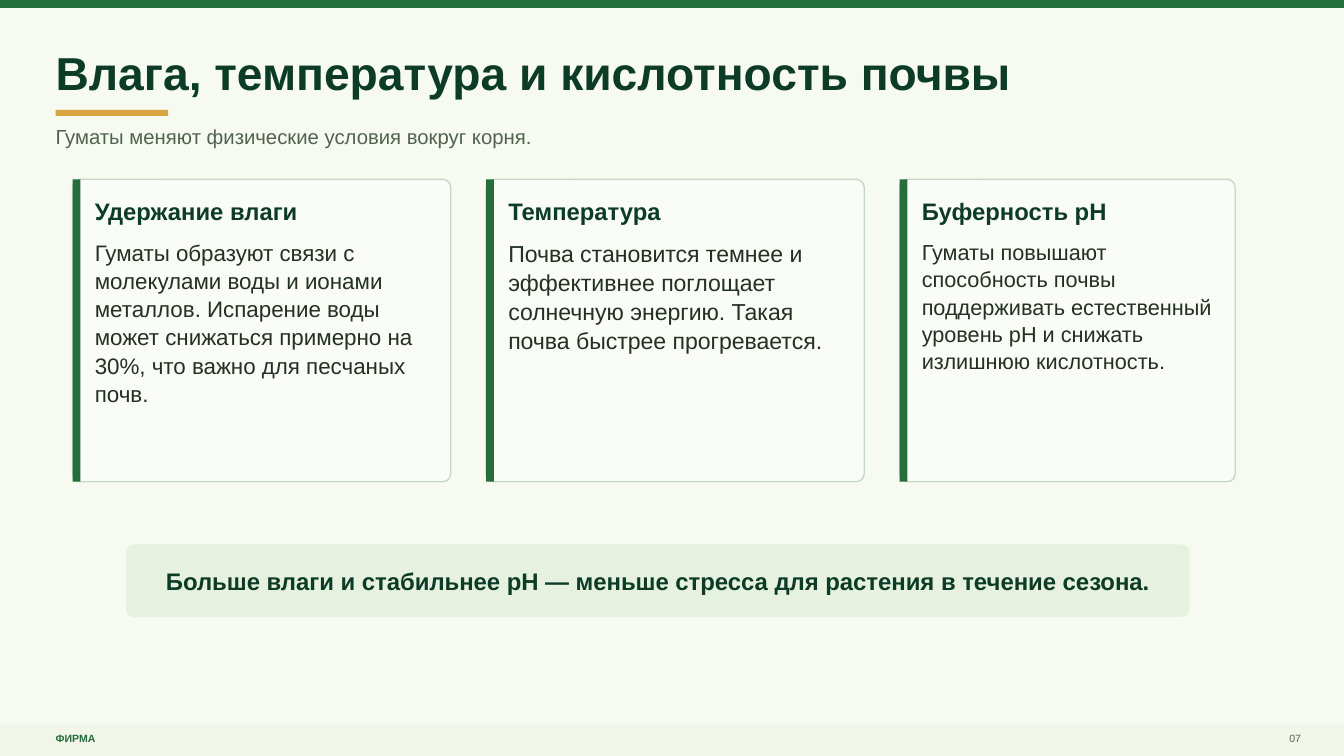
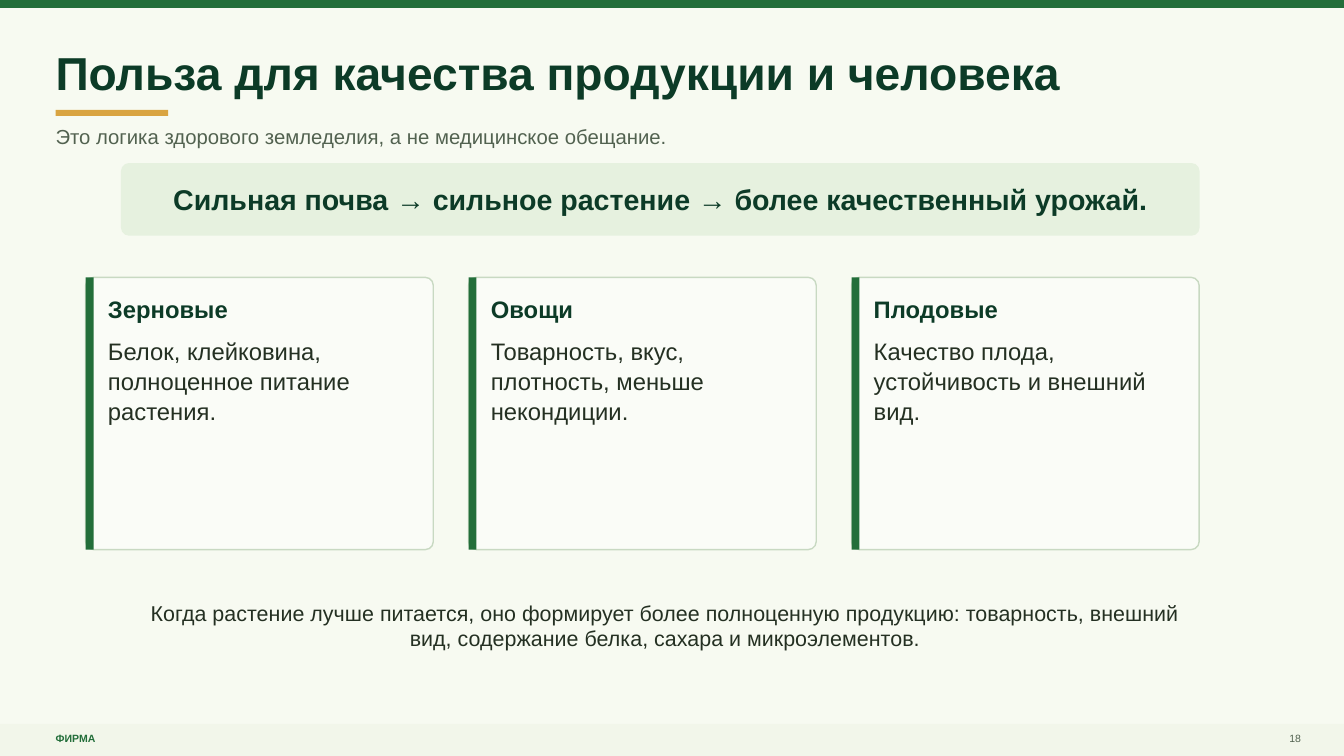
from pptx import Presentation
from pptx.dml.color import RGBColor
from pptx.enum.shapes import MSO_SHAPE
from pptx.enum.text import MSO_ANCHOR, PP_ALIGN
from pptx.util import Cm, Pt

COLORS = {
    "page": "F7FAF1", "footer": "F2F6EA", "green": "236E3A", "dark": "0C3B27",
    "gold": "D9A441", "muted": "526250", "body": "243022",
    "card": "FAFCF7", "border": "C8D9C2", "banner": "E6F1DF",
}
FONT = "Arial"
WIDTH, HEIGHT = 33.87, 19.05
MARGIN = 1.4
BAR = 0.2
RADIUS = 0.2
GAP = 0.89
PAD = 0.56

SLIDES = [
    {
        "number": "07",
        "title": "Влага, температура и кислотность почвы",
        "subtitle": "Гуматы меняют физические условия вокруг корня.",
        "cards_at": (1.83, 4.52), "card_height": 7.62,
        "cards": [
            (9.53, "Удержание влаги", 16,
             "Гуматы образуют связи с молекулами воды и ионами металлов. "
             "Испарение воды может снижаться примерно на 30%, "
             "что важно для песчаных почв."),
            (9.53, "Температура", 16.5,
             "Почва становится темнее и эффективнее поглощает солнечную "
             "энергию. Такая почва быстрее прогревается."),
            (8.46, "Буферность pH", 15.5,
             "Гуматы повышают способность почвы поддерживать естественный "
             "уровень pH и снижать излишнюю кислотность."),
        ],
        "banner_at": (3.18, 13.72, 26.8, 1.83), "banner_size": 17.1,
        "banner": "Больше влаги и стабильнее pH — меньше стресса "
                  "для растения в течение сезона.",
    },
    {
        "number": "18",
        "title": "Польза для качества продукции и человека",
        "subtitle": "Это логика здорового земледелия, а не медицинское обещание.",
        "cards_at": (2.16, 6.99), "card_height": 6.86,
        "cards": [
            (8.76, "Зерновые", 17,
             "Белок, клейковина, полноценное питание растения."),
            (8.76, "Овощи", 17,
             "Товарность, вкус, плотность, меньше некондиции."),
            (8.76, "Плодовые", 17,
             "Качество плода, устойчивость и внешний вид."),
        ],
        "banner_at": (3.05, 4.11, 27.18, 1.83), "banner_size": 20.4,
        "banner": "Сильная почва → сильное растение → более качественный урожай.",
        "note": "Когда растение лучше питается, оно формирует более полноценную "
                "продукцию: товарность, внешний вид, содержание белка, сахара "
                "и микроэлементов.",
    },
]


def add_box(s, x, y, w, h, fill, line=None, rounded=False):
    kind = MSO_SHAPE.ROUNDED_RECTANGLE if rounded else MSO_SHAPE.RECTANGLE
    sp = s.shapes.add_shape(kind, Cm(x), Cm(y), Cm(w), Cm(h))
    sp.shadow.inherit = False
    if rounded:
        sp.adjustments[0] = RADIUS / min(w, h)
    sp.fill.solid()
    sp.fill.fore_color.rgb = RGBColor.from_string(COLORS[fill])
    if line:
        sp.line.color.rgb = RGBColor.from_string(COLORS[line])
        sp.line.width = Pt(1)
    else:
        sp.line.fill.background()
    return sp


def add_text(s, text, at=None, sp=None, size=17, color="dark", bold=False,
             align=PP_ALIGN.LEFT, anchor=MSO_ANCHOR.MIDDLE, spacing=None):
    """Write text into the shape sp, or into a new text box placed at."""
    if sp is None:
        sp = s.shapes.add_textbox(*[Cm(v) for v in at])
    tf = sp.text_frame
    tf.word_wrap = True
    tf.vertical_anchor = anchor
    tf.margin_left = tf.margin_top = tf.margin_right = tf.margin_bottom = 0
    p = tf.paragraphs[0]
    p.alignment = align
    p.line_spacing = spacing
    r = p.add_run()
    r.text = text
    r.font.name = FONT
    r.font.size = Pt(size)
    r.font.bold = bold
    r.font.color.rgb = RGBColor.from_string(COLORS[color])


prs = Presentation()
prs.slide_width, prs.slide_height = Cm(WIDTH), Cm(HEIGHT)

for data in SLIDES:
    s = prs.slides.add_slide(prs.slide_layouts[6])
    s.background.fill.solid()
    s.background.fill.fore_color.rgb = RGBColor.from_string(COLORS["page"])

    # Top bar and footer
    add_box(s, 0, 0, WIDTH, BAR, "green")
    add_box(s, 0, 18.24, WIDTH, 0.81, "footer")
    add_text(s, "ФИРМА", (MARGIN, 18.42, 3.05, 0.38), size=7.5,
             color="green", bold=True)
    add_text(s, data["number"], (31.65, 18.42, 1.14, 0.38), size=7.5,
             color="muted", align=PP_ALIGN.RIGHT)

    # Heading
    add_text(s, data["title"], (MARGIN, 1.07, 29.08, 1.47), size=33, bold=True)
    add_box(s, MARGIN, 2.77, 2.84, 0.15, "gold")
    add_text(s, data["subtitle"], (MARGIN, 3.02, 28.45, 0.84), size=14.5,
             color="muted")

    # Cards
    x, y = data["cards_at"]
    h = data["card_height"]
    for w, heading, size, body in data["cards"]:
        add_box(s, x, y, w, h, "card", line="border", rounded=True)
        add_box(s, x, y, BAR, h, "green")
        add_text(s, heading, (x + PAD, y + 0.43, w - 2 * PAD, 0.71), bold=True)
        add_text(s, body, (x + PAD, y + 1.47, w - 2 * PAD, h - 1.73), size=size,
                 color="body", anchor=MSO_ANCHOR.TOP, spacing=1.05)
        x += w + GAP

    # Key message
    banner = add_box(s, *data["banner_at"], "banner", rounded=True)
    add_text(s, data["banner"], sp=banner, size=data["banner_size"], bold=True,
             align=PP_ALIGN.CENTER)
    if "note" in data:
        add_text(s, data["note"], (3.3, 15.11, 26.92, 1.09), size=15.3,
                 color="body", align=PP_ALIGN.CENTER, anchor=MSO_ANCHOR.TOP)

prs.save("out.pptx")
